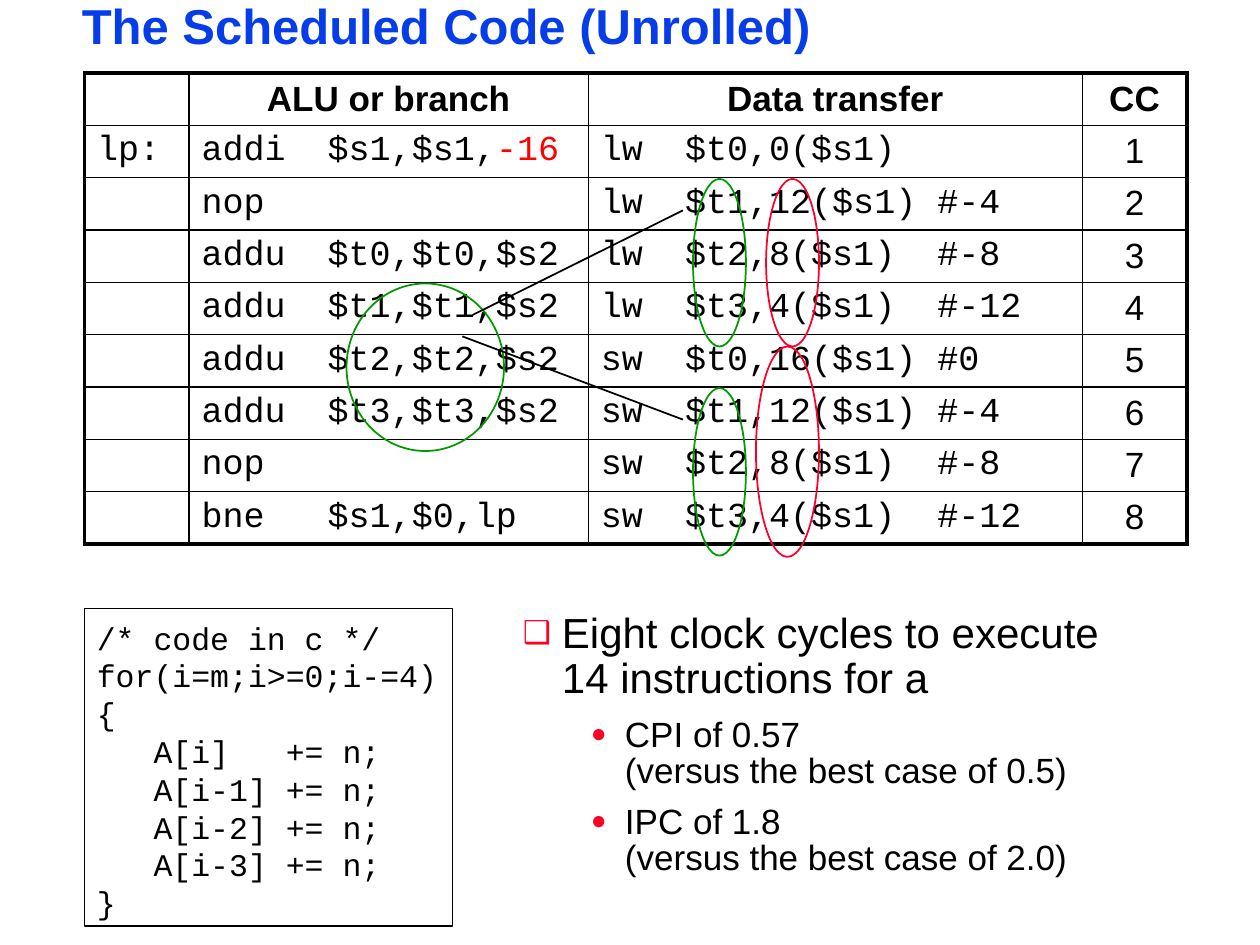
from copy import deepcopy
from typing import NamedTuple

from lxml.etree import SubElement
from pptx import Presentation
from pptx.dml.color import RGBColor
from pptx.enum.shapes import MSO_CONNECTOR, MSO_SHAPE
from pptx.enum.text import MSO_ANCHOR, MSO_AUTO_SIZE, PP_ALIGN
from pptx.oxml.ns import qn
from pptx.util import Inches, Pt

BLACK = RGBColor(0x00, 0x00, 0x00)
BLUE = RGBColor(0x06, 0x3D, 0xE8)
CRIMSON = RGBColor(0xFC, 0x01, 0x28)
RED = RGBColor(0xFF, 0x00, 0x00)
GREEN = RGBColor(0x00, 0x99, 0x00)
SANS, MONO = "Arial", "Courier New"


class Box(NamedTuple):
    left: float
    top: float
    width: float
    height: float

    def lengths(self) -> list:
        return [Inches(value) for value in self]


class Oval(NamedTuple):
    box: Box
    color: RGBColor


class Bullet(NamedTuple):
    text: str
    level: int
    size: int
    symbol: str
    margin: float
    hang: float
    line_spacing: float
    space_before: int


HEADER = ("", "ALU or branch", "Data transfer", "CC")
COLUMN_WIDTHS = (0.83, 3.17, 3.92, 0.83)
TABLE_BOX = Box(0.67, 0.58, 8.75, 3.74)
SCHEDULE = (
    ("addi  $s1,$s1,-16", "lw  $t0,0($s1)"),
    ("nop", "lw  $t1,12($s1) #-4"),
    ("addu  $t0,$t0,$s2", "lw  $t2,8($s1)  #-8"),
    ("addu  $t1,$t1,$s2", "lw  $t3,4($s1)  #-12"),
    ("addu  $t2,$t2,$s2", "sw  $t0,16($s1) #0"),
    ("addu  $t3,$t3,$s2", "sw  $t1,12($s1) #-4"),
    ("nop", "sw  $t2,8($s1)  #-8"),
    ("bne   $s1,$0,lp", "sw  $t3,4($s1)  #-12"),
)
CHANGED_STEP = "-16"
OVALS = (
    Oval(Box(6.08, 1.42, 0.42, 1.33), CRIMSON),
    Oval(Box(5.5, 1.42, 0.42, 1.33), GREEN),
    Oval(Box(5.5, 3.08, 0.42, 1.33), GREEN),
    Oval(Box(6, 2.75, 0.5, 1.67), CRIMSON),
    Oval(Box(2.75, 2.25, 1.25, 1.33), GREEN),
)
LINKS = ((5.42, 1.67, 3.75, 2.5), (3.67, 2.67, 5.42, 3.33))
CODE_LINES = (
    "/* code in c */",
    "for(i=m;i>=0;i-=4)",
    "{",
    "   A[i]   += n;",
    "   A[i-1] += n;",
    "   A[i-2] += n;",
    "   A[i-3] += n;",
    "}",
)
BULLETS = (
    Bullet("Eight clock cycles to execute 14 instructions for a", 0, 24, "❑", 0.31, 0.31, 0.9, 0),
    Bullet("CPI of 0.57\v(versus the best case of 0.5)", 1, 20, "●", 0.81, 0.27, 0.85, 9),
    Bullet("IPC of 1.8\v(versus the best case of 2.0)", 1, 20, "●", 0.81, 0.27, 0.85, 9),
)


def set_all(target, values: dict) -> None:
    for name, value in values.items():
        setattr(target, name, value)


def style_runs(paragraph, font_name: str, size: int, color=BLACK, bold=False) -> None:
    for run in paragraph.runs:
        set_all(run.font, {"name": font_name, "size": Pt(size), "bold": bold})
        run.font.color.rgb = color
    # Line breaks take the size of the text around them
    for line_break in paragraph._p.findall(qn("a:br")):
        line_break.insert(0, deepcopy(paragraph.runs[0]._r.rPr))


def place_placeholder(shape, box: Box) -> None:
    set_all(shape, dict(zip(("left", "top", "width", "height"), box.lengths())))
    set_all(shape.text_frame, {
        "margin_left": Inches(0.07), "margin_right": Inches(0.07),
        "margin_top": Inches(0.03), "margin_bottom": Inches(0.03),
        "vertical_anchor": MSO_ANCHOR.TOP, "word_wrap": True,
        "auto_size": MSO_AUTO_SIZE.NONE,
    })


def add_bullet(paragraph, bullet: Bullet) -> None:
    paragraph.text = bullet.text
    set_all(paragraph, {
        "level": bullet.level, "line_spacing": bullet.line_spacing,
        "space_before": Pt(bullet.space_before),
    })
    style_runs(paragraph, SANS, bullet.size)
    properties = paragraph._p.get_or_add_pPr()
    properties.set("marL", str(Inches(bullet.margin)))
    properties.set("indent", str(-Inches(bullet.hang)))
    color = SubElement(properties, qn("a:buClr"))
    SubElement(color, qn("a:srgbClr"), val=str(CRIMSON))
    SubElement(properties, qn("a:buSzPct"), val="75000")
    SubElement(properties, qn("a:buFont"), typeface=SANS)
    SubElement(properties, qn("a:buChar"), char=bullet.symbol)


def set_borders(cell, outer_sides: dict) -> None:
    properties = cell._tc.get_or_add_tcPr()
    for position, (side, is_outer) in enumerate(outer_sides.items()):
        line = SubElement(properties, qn(f"a:ln{side}"), w=str(Pt(2.25 if is_outer else 1)))
        fill = SubElement(line, qn("a:solidFill"))
        SubElement(fill, qn("a:srgbClr"), val=str(BLACK))
        properties.insert(position, line)


def add_schedule(slide) -> None:
    rows = [HEADER] + [
        ("lp:" if cycle == 1 else "", alu, transfer, str(cycle))
        for cycle, (alu, transfer) in enumerate(SCHEDULE, 1)
    ]
    last_row, last_column = len(rows) - 1, len(HEADER) - 1
    table = slide.shapes.add_table(len(rows), len(HEADER), *TABLE_BOX.lengths()).table
    set_all(table, {"first_row": False, "horz_banding": False})
    for column, width in zip(table.columns, COLUMN_WIDTHS):
        column.width = Inches(width)
    for row_index, texts in enumerate(rows):
        table.rows[row_index].height = Inches(TABLE_BOX.height / len(rows))
        for column_index, text in enumerate(texts):
            cell = table.cell(row_index, column_index)
            set_all(cell, {"margin_top": Inches(0.05), "margin_bottom": Inches(0.04)})
            cell.fill.background()
            is_header, is_cycle = row_index == 0, column_index == last_column
            paragraph = cell.text_frame.paragraphs[0]
            paragraph.alignment = PP_ALIGN.CENTER if is_header or is_cycle else PP_ALIGN.LEFT
            for part in filter(None, text.partition(CHANGED_STEP)):
                paragraph.add_run().text = part
            style_runs(paragraph, SANS if is_header or is_cycle else MONO, 20, bold=is_header)
            for run in paragraph.runs:
                if run.text == CHANGED_STEP:
                    run.font.color.rgb = RED
            set_borders(cell, {
                "L": column_index == 0, "R": is_cycle,
                "T": is_header, "B": row_index == last_row,
            })


def add_outline(slide, kind, box: Box, color: RGBColor, weight: float):
    shape = slide.shapes.add_shape(kind, *box.lengths())
    shape.shadow.inherit = False
    shape.fill.background()
    shape.line.color.rgb = color
    shape.line.width = Pt(weight)
    return shape


def add_link(slide, ends: tuple) -> None:
    link = slide.shapes.add_connector(MSO_CONNECTOR.STRAIGHT, *map(Inches, ends))
    link.line.color.rgb = BLACK
    link.line.width = Pt(1)
    SubElement(link._element.spPr, qn("a:effectLst"))


def add_code(slide) -> None:
    shape = add_outline(slide, MSO_SHAPE.RECTANGLE, Box(0.67, 4.83, 2.92, 2.52), BLACK, 0.75)
    frame = shape.text_frame
    set_all(frame, {"vertical_anchor": MSO_ANCHOR.TOP, "word_wrap": False, "margin_top": Inches(0.08)})
    frame.text = "\n".join(CODE_LINES)
    for paragraph in frame.paragraphs:
        set_all(paragraph, {"alignment": PP_ALIGN.LEFT, "line_spacing": Pt(21.6)})
        style_runs(paragraph, MONO, 18)


def main() -> None:
    presentation = Presentation()
    set_all(presentation, {"slide_width": Inches(10), "slide_height": Inches(7.5)})
    slide = presentation.slides.add_slide(presentation.slide_layouts[1])

    # Title and conclusions
    title, body = slide.shapes.title, slide.placeholders[1]
    place_placeholder(title, Box(0.58, 0, 8.92, 0.46))
    title.text_frame.text = "The Scheduled Code (Unrolled)"
    heading = title.text_frame.paragraphs[0]
    set_all(heading, {"alignment": PP_ALIGN.LEFT, "line_spacing": 0.87})
    style_runs(heading, SANS, 28, BLUE, bold=True)
    place_placeholder(body, Box(4.08, 4.83, 5.08, 2.2))
    frame = body.text_frame
    for index, bullet in enumerate(BULLETS):
        add_bullet(frame.add_paragraph() if index else frame.paragraphs[0], bullet)

    # Schedule with its marks, then the source code
    add_schedule(slide)
    for oval in OVALS:
        add_outline(slide, MSO_SHAPE.OVAL, oval.box, oval.color, 1)
    add_code(slide)
    for ends in LINKS:
        add_link(slide, ends)
    presentation.save("out.pptx")


if __name__ == "__main__":
    main()
